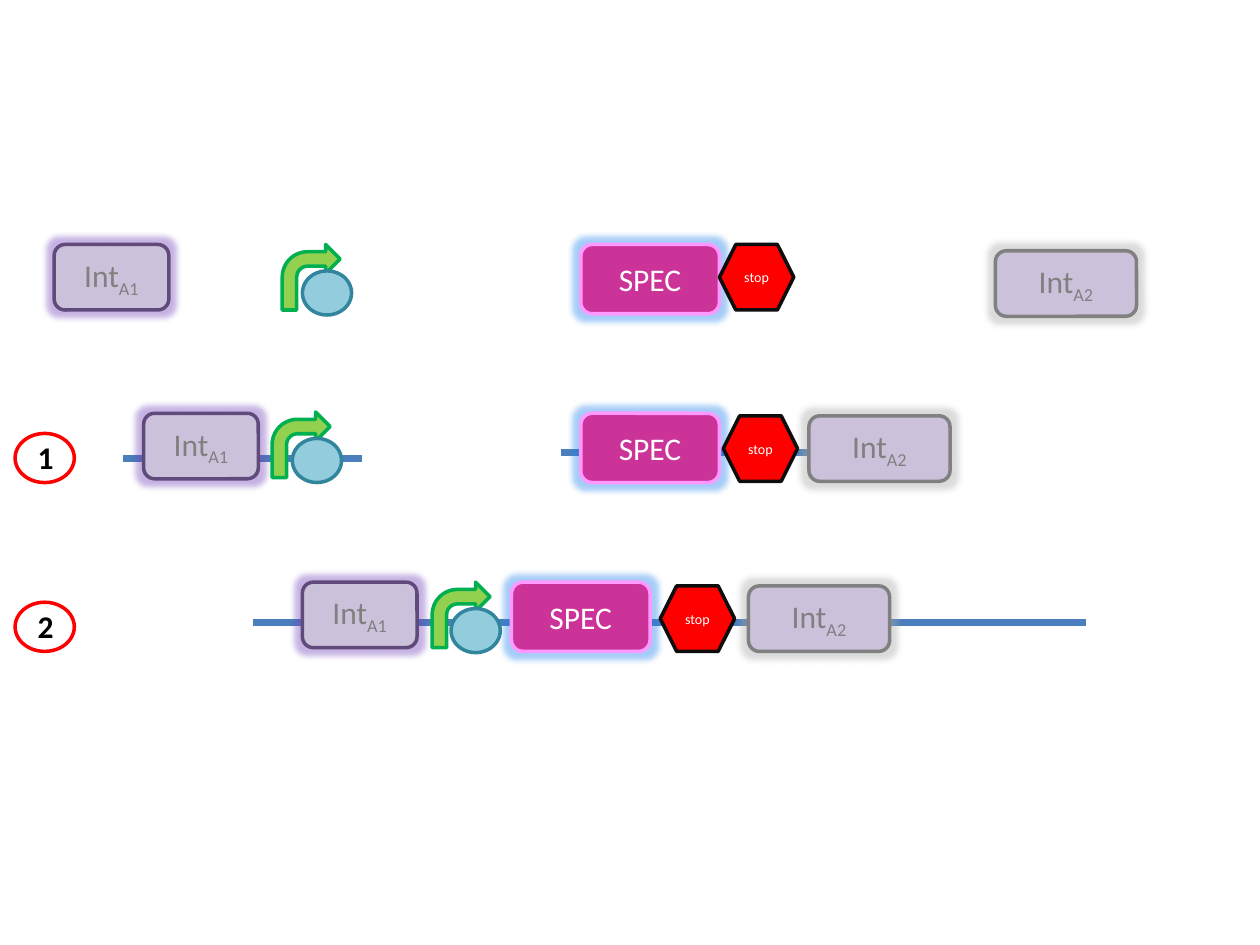
from lxml import etree
from pptx import Presentation
from pptx.dml.color import RGBColor
from pptx.enum.shapes import MSO_CONNECTOR, MSO_SHAPE
from pptx.enum.text import MSO_ANCHOR, PP_ALIGN
from pptx.oxml.ns import qn
from pptx.util import Inches, Pt

ROUNDED = MSO_SHAPE.ROUNDED_RECTANGLE
ELLIPSE = MSO_SHAPE.OVAL
BENT_ARROW = MSO_SHAPE.BENT_ARROW
HEXAGON = MSO_SHAPE.HEXAGON
STRAIGHT = MSO_CONNECTOR.STRAIGHT
MIDDLE = MSO_ANCHOR.MIDDLE
CENTER = PP_ALIGN.CENTER

THEME = {
    "font": "Calibri", "label": 18, "small": 8, "outline": 2, "backbone": 4,
    "glow": 7, "glow_alpha": 40,
    "lavender": "CCC1DA", "purple": "604A7B", "grey": "808080",
    "lime": "92D050", "green": "00B050", "aqua": "93CDDD", "teal": "31859C",
    "magenta": "CC3399", "pink": "FF99FF", "red": "FF0000", "ink": "0D0D0D",
    "white": "FFFFFF", "black": "000000", "blue": "4B7EBC",
    "purple_glow": "7040BA", "blue_glow": "1F80EC", "grey_glow": "A6A6A6",
}

PARTS = {
    "first_integrase": dict(preset=ROUNDED, size=(0.91, 0.52), fill="lavender", line="purple",
                            glow="purple_glow", text=("Int", "A1"), ink="grey"),
    "promoter": dict(preset=BENT_ARROW, size=(0.46, 0.52), fill="lime", line="green"),
    "binding_site": dict(preset=ELLIPSE, size=(0.39, 0.35), fill="aqua", line="teal"),
    "resistance": dict(preset=ROUNDED, size=(1.1, 0.55), fill="magenta", line="pink",
                       glow="blue_glow", text=("SPEC",), ink="white"),
    "terminator": dict(preset=HEXAGON, size=(0.59, 0.52), fill="red", line="ink",
                       text=("stop",), ink="white", type_size="small"),
    "second_integrase": dict(preset=ROUNDED, size=(1.12, 0.52), fill="lavender", line="grey",
                             glow="grey_glow", text=("Int", "A2"), ink="grey"),
    "badge": dict(preset=ELLIPSE, size=(0.47, 0.39), fill=None, line="red"),
}

# lefts: part -> left edge; drops: part -> distance below the row's top
ROW_TOP, ROW_PITCH = 1.94, 1.34
BADGE_DROP, BADGE_LEFT, NUMBER_LEFT = 0.16, 0.12, 0.2
ROWS = [
    dict(number=None, backbones=[],
         lefts=dict(first_integrase=0.43, promoter=2.24, binding_site=2.4,
                    resistance=4.61, terminator=5.71, second_integrase=7.9),
         drops=dict(binding_site=0.21, second_integrase=0.05)),
    dict(number="1", backbones=[(4.45, 7.05, 0.31), (0.98, 2.87, 0.36)],
         lefts=dict(first_integrase=1.14, promoter=2.16, binding_site=2.32,
                    resistance=4.61, terminator=5.74, second_integrase=6.42),
         drops=dict(promoter=-0.01, binding_site=0.2, terminator=0.02, second_integrase=0.02)),
    dict(number="2", backbones=[(2.01, 8.62, 0.32)],
         lefts=dict(first_integrase=2.4, promoter=3.43, binding_site=3.58,
                    resistance=4.06, terminator=5.24, second_integrase=5.94),
         drops=dict(binding_site=0.21, terminator=0.03, second_integrase=0.03)),
]


def color(name):
    return RGBColor.from_string(THEME[name])


def add_run(paragraph, text, ink, type_size="label", bold=False):
    run = paragraph.add_run()
    run.text = text
    formats = {"name": THEME["font"], "size": Pt(THEME[type_size]), "bold": bold}
    for attribute, value in formats.items():
        setattr(run.font, attribute, value)
    run.font.color.rgb = color(ink)
    return run


def add_glow(shape, name):
    effects = shape._element.spPr.find(qn("a:effectLst"))
    glow = etree.SubElement(effects, qn("a:glow"), rad=str(Pt(THEME["glow"])))
    tint = etree.SubElement(glow, qn("a:srgbClr"), val=THEME[name])
    etree.SubElement(tint, qn("a:alpha"), val=str(THEME["glow_alpha"] * 1000))


def add_part(slide, name, left, top):
    part = PARTS[name]
    shape = slide.shapes.add_shape(
        part["preset"], *(Inches(length) for length in (left, top, *part["size"])))
    shape.shadow.inherit = False
    if part["fill"]:
        shape.fill.solid()
        shape.fill.fore_color.rgb = color(part["fill"])
    else:
        shape.fill.background()
    shape.line.color.rgb = color(part["line"])
    shape.line.width = Pt(THEME["outline"])
    if "glow" in part:
        add_glow(shape, part["glow"])
    if "text" in part:
        shape.text_frame.vertical_anchor = MIDDLE
        paragraph = shape.text_frame.paragraphs[0]
        paragraph.alignment = CENTER
        for index, text in enumerate(part["text"]):
            run = add_run(paragraph, text, part["ink"], part.get("type_size", "label"))
            if index:
                run.font._element.set("baseline", "-25000")


def add_backbone(slide, start, end, height):
    line = slide.shapes.add_connector(
        STRAIGHT, Inches(start), Inches(height), Inches(end), Inches(height))
    line.line.color.rgb = color("blue")
    line.line.width = Pt(THEME["backbone"])
    etree.SubElement(line._element.spPr, qn("a:effectLst"))


def add_number(slide, number, top):
    add_part(slide, "badge", BADGE_LEFT, top)
    box = slide.shapes.add_textbox(
        Inches(NUMBER_LEFT), Inches(top - 0.01), Inches(0.63), Inches(0.4))
    box.text_frame.word_wrap = True
    add_run(box.text_frame.paragraphs[0], number, "black", bold=True)


def main():
    presentation = Presentation()
    presentation.slide_width, presentation.slide_height = Inches(10), Inches(7.5)
    slide = presentation.slides.add_slide(presentation.slide_layouts[6])
    for index, row in enumerate(ROWS):
        top = ROW_TOP + index * ROW_PITCH
        for start, end, drop in row["backbones"]:
            add_backbone(slide, start, end, top + drop)
        for name, left in row["lefts"].items():
            add_part(slide, name, left, top + row["drops"].get(name, 0))
        if row["number"]:
            add_number(slide, row["number"], top + BADGE_DROP)
    presentation.save("out.pptx")


if __name__ == "__main__":
    main()
